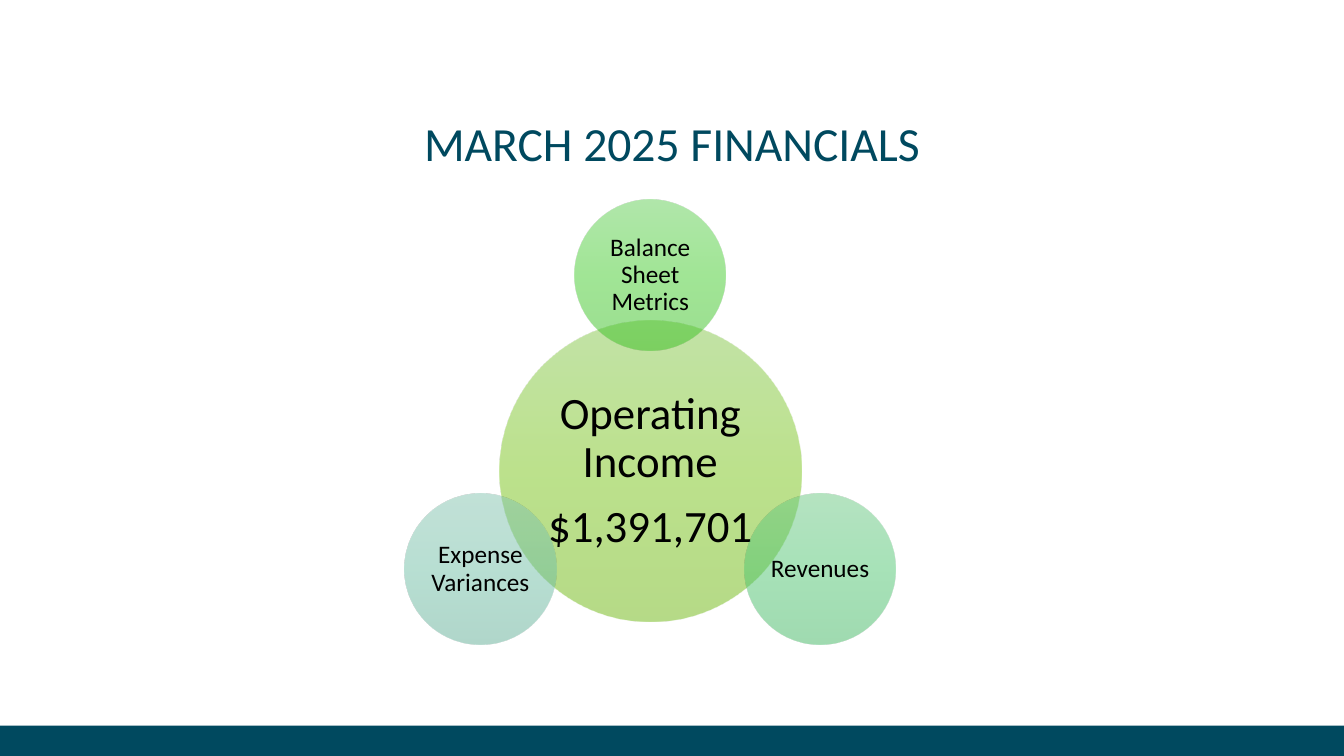
import math

from lxml import etree
from pptx import Presentation
from pptx.dml.color import RGBColor
from pptx.enum.shapes import MSO_SHAPE
from pptx.enum.text import MSO_ANCHOR, PP_ALIGN
from pptx.oxml.ns import qn
from pptx.util import Inches, Pt

RECTANGLE, CIRCLE = MSO_SHAPE.RECTANGLE, MSO_SHAPE.OVAL
CENTER = PP_ALIGN.CENTER
MIDDLE, BOTTOM = MSO_ANCHOR.MIDDLE, MSO_ANCHOR.BOTTOM

FONT = "Calibri"
WIDTH, HEIGHT = 13.33, 7.5
COLORS = {"navy": "00495F", "black": "000000"}
GRADIENTS = {
    "lime": ("88C84F", "79C619", "6CB70F"),
    "green": ("62D056", "43CE2C", "37BE21"),
    "emerald": ("6CC984", "4FC771", "40B761"),
    "teal": ("86C5B1", "71C1A8", "61AF97"),
}

# Diagram geometry in inches
CENTER_X, CENTER_Y = 6.45, 4.675
HUB_SIZE, SATELLITE_SIZE = 2.99, 1.5
ORBIT = 1.945
SATELLITES = [
    ("Balance Sheet Metrics", "green"),
    ("Revenues", "emerald"),
    ("Expense Variances", "teal"),
]


def write_text(frame, lines, size, color, anchor):
    frame.word_wrap = True
    frame.vertical_anchor = anchor
    for index, line in enumerate(lines):
        para = frame.paragraphs[0] if index == 0 else frame.add_paragraph()
        para.text = line
        para.alignment = CENTER
        para.line_spacing = 0.9
        if index < len(lines) - 1:
            para.space_after = Pt(0.35 * size)
        para.font.name = FONT
        para.font.size = Pt(size)
        para.font.color.rgb = RGBColor.from_string(COLORS[color])


def fill_gradient(shape, stops):
    """Top-to-bottom gradient of evenly spaced, half-transparent stops."""
    shape.fill.gradient()
    shape.fill.gradient_angle = 270
    stop_list = shape._element.spPr.find(".//" + qn("a:gsLst"))
    for old_stop in list(stop_list):
        stop_list.remove(old_stop)
    for index, color in enumerate(stops):
        position = 100000 * index // (len(stops) - 1)
        stop = etree.SubElement(stop_list, qn("a:gs"), pos=str(position))
        rgb = etree.SubElement(stop, qn("a:srgbClr"), val=color)
        etree.SubElement(rgb, qn("a:alpha"), val="50000")


def add_shape(page, kind, left, top, width, height):
    shape = page.shapes.add_shape(
        kind, Inches(left), Inches(top), Inches(width), Inches(height))
    shape.shadow.inherit = False
    shape.line.fill.background()
    return shape


def add_circle(page, x, y, diameter, gradient, lines, size, inset):
    circle = add_shape(page, CIRCLE, x - diameter / 2, y - diameter / 2,
                       diameter, diameter)
    fill_gradient(circle, GRADIENTS[gradient])
    frame = circle.text_frame
    frame.margin_left = frame.margin_right = Inches(inset)
    frame.margin_top = frame.margin_bottom = Inches(inset)
    write_text(frame, lines, size, "black", MIDDLE)


def add_title(page, text):
    box = page.shapes.add_textbox(
        0, Inches(HEIGHT / 15), Inches(WIDTH), Inches(HEIGHT / 6))
    write_text(box.text_frame, [text], 34, "navy", BOTTOM)


def add_footer_band(page):
    band_height = HEIGHT * 0.04
    band = add_shape(page, RECTANGLE, 0, HEIGHT - band_height, WIDTH, band_height)
    band.fill.solid()
    band.fill.fore_color.rgb = RGBColor.from_string(COLORS["navy"])


def main():
    deck = Presentation()
    deck.slide_width, deck.slide_height = Inches(WIDTH), Inches(HEIGHT)
    page = deck.slides.add_slide(deck.slide_layouts[6])

    add_footer_band(page)
    add_title(page, "MARCH 2025 FINANCIALS")

    # Hub
    add_circle(page, CENTER_X, CENTER_Y, HUB_SIZE, "lime",
               ["Operating Income", "$1,391,701"], 32, 0.04)

    # Satellites, clockwise from the top
    for index, (label, gradient) in enumerate(SATELLITES):
        angle = math.tau * index / len(SATELLITES)
        add_circle(page, CENTER_X + ORBIT * math.sin(angle),
                   CENTER_Y - ORBIT * math.cos(angle),
                   SATELLITE_SIZE, gradient, [label], 18, 0.03)

    deck.save("out.pptx")


if __name__ == "__main__":
    main()
